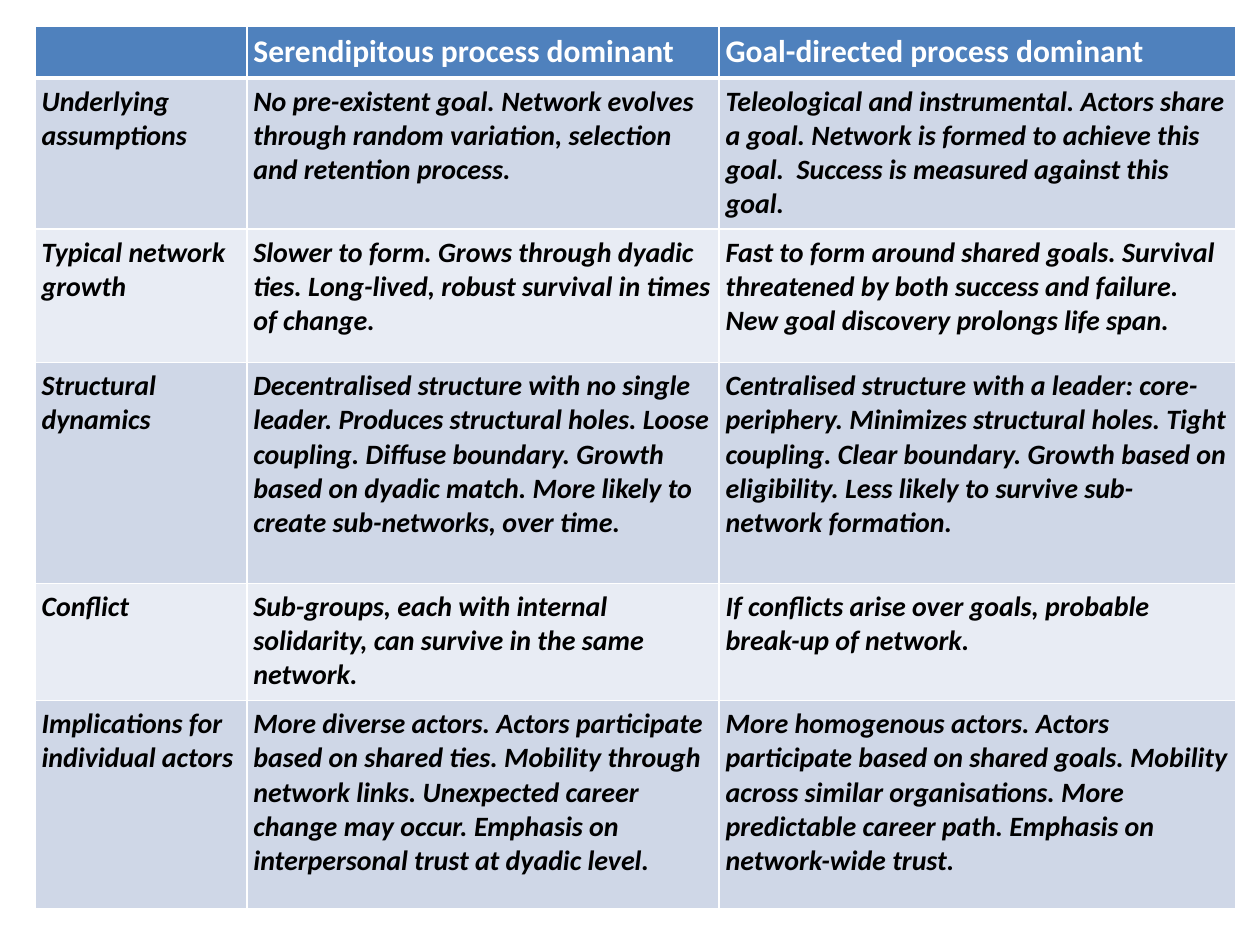
from lxml.etree import SubElement
from pptx import Presentation
from pptx.dml.color import RGBColor
from pptx.oxml.ns import qn
from pptx.util import Cm, Pt

HEX = {"head": "4F81BD", "odd": "CFD7E7", "even": "E8ECF4",
       "white": "FFFFFF", "black": "000000"}
FONT = "Calibri"
LEFT, TOP = 0.71, 0.53
WIDTHS = [4.27, 9.52, 10.41]
HEIGHTS = [1.04, 3.05, 2.69, 4.45, 2.36, 4.19]
INSET = 0.13

ROWS = [
    ("", "Serendipitous process dominant", "Goal-directed process dominant"),
    ("Underlying assumptions",
     "No pre-existent goal. Network evolves through random variation, "
     "selection and retention process.",
     "Teleological and instrumental. Actors share a goal. Network is formed "
     "to achieve this goal.  Success is measured against this goal."),
    ("Typical network growth",
     "Slower to form. Grows through dyadic ties. Long-lived, robust survival "
     "in times of change.",
     "Fast to form around shared goals. Survival threatened by both success "
     "and failure. New goal discovery prolongs life span."),
    ("Structural dynamics",
     "Decentralised structure with no single leader. Produces structural "
     "holes. Loose coupling. Diffuse boundary. Growth based on dyadic match. "
     "More likely to create sub-networks, over time.",
     "Centralised structure with a leader: core-periphery. Minimizes "
     "structural holes. Tight coupling. Clear boundary. Growth based on "
     "eligibility. Less likely to survive sub-network formation."),
    ("Conflict",
     "Sub-groups, each with internal solidarity, can survive in the same "
     "network.",
     "If conflicts arise over goals, probable break-up of network."),
    ("Implications for individual actors",
     "More diverse actors. Actors participate based on shared ties. Mobility "
     "through network links. Unexpected career change may occur. Emphasis on "
     "interpersonal trust at dyadic level.",
     "More homogenous actors. Actors participate based on shared goals. "
     "Mobility across similar organisations. More predictable career path. "
     "Emphasis on network-wide trust."),
]


def write(cell, text, size=16, color="black", bold=True, italic=True):
    cell.margin_left = cell.margin_right = Cm(INSET)
    cell.margin_top = cell.margin_bottom = Cm(INSET)
    if not text:
        return
    run = cell.text_frame.paragraphs[0].add_run()
    run.text = text
    font = run.font
    font.name, font.size = FONT, Pt(size)
    font.bold, font.italic = bold, italic
    font.color.rgb = RGBColor.from_string(HEX[color])


def frame(cell, top=1, bottom=1):
    props = cell._tc.get_or_add_tcPr()
    for side, width in (("L", 1), ("R", 1), ("T", top), ("B", bottom)):
        line = SubElement(props, qn("a:ln" + side), w=str(Pt(width)))
        fill = SubElement(line, qn("a:solidFill"))
        SubElement(fill, qn("a:srgbClr"), val=HEX["white"])


def paint(cell, color):
    cell.fill.solid()
    cell.fill.fore_color.rgb = RGBColor.from_string(HEX[color])


def main():
    deck = Presentation()
    deck.slide_width, deck.slide_height = Cm(25.4), Cm(19.05)
    slide = deck.slides.add_slide(deck.slide_layouts[6])
    table = slide.shapes.add_table(
        len(ROWS), len(WIDTHS), Cm(LEFT), Cm(TOP),
        Cm(sum(WIDTHS)), Cm(sum(HEIGHTS))).table
    for col, width in zip(table.columns, WIDTHS):
        col.width = Cm(width)
    for row, height in zip(table.rows, HEIGHTS):
        row.height = Cm(height)
    for r, texts in enumerate(ROWS):
        for c, text in enumerate(texts):
            cell = table.cell(r, c)
            if r == 0:
                write(cell, text, size=18, color="white", italic=False)
                frame(cell, bottom=3)
                paint(cell, "head")
            else:
                write(cell, text)
                frame(cell, top=3 if r == 1 else 1)
                paint(cell, "odd" if r % 2 else "even")
    deck.save("out.pptx")


if __name__ == "__main__":
    main()
